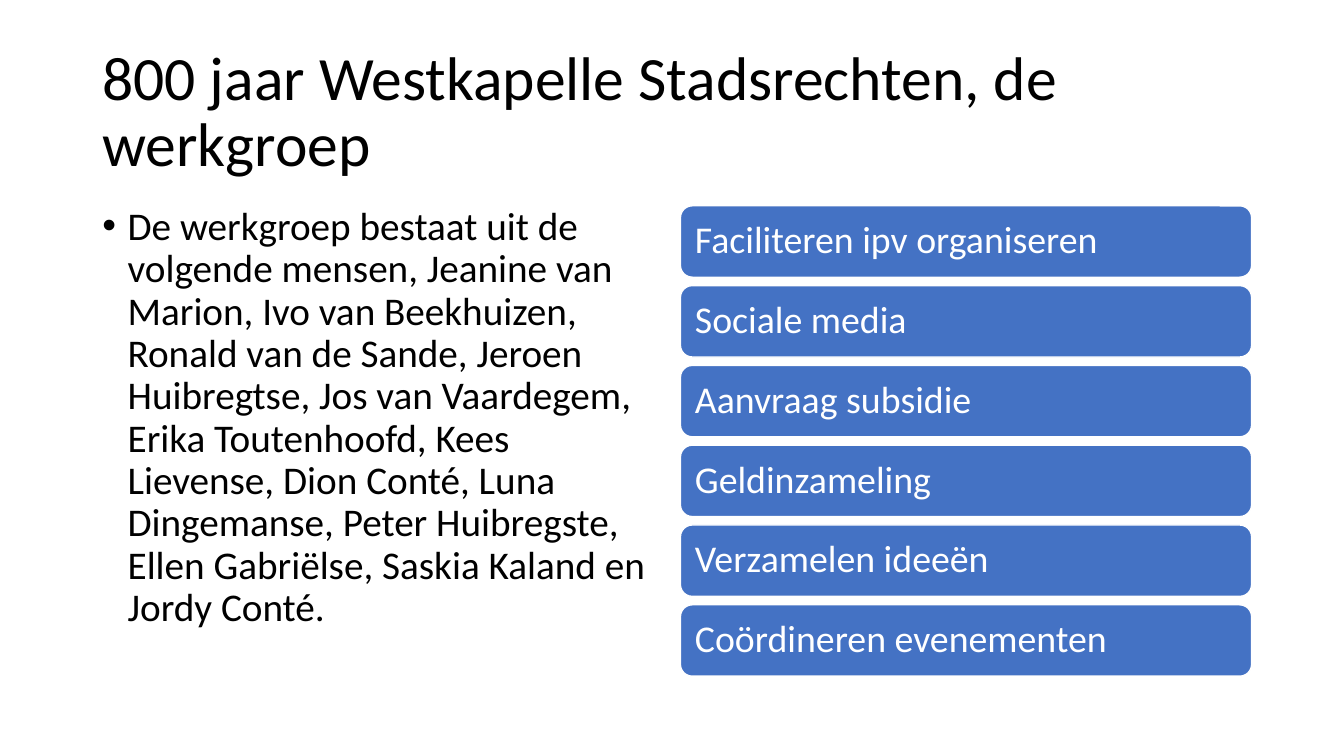
"""Builds the slide that presents the working group and its tasks."""
from dataclasses import dataclass

from lxml import etree
from pptx import Presentation
from pptx import util as u
from pptx.dml.color import RGBColor
from pptx.enum import shapes, text
from pptx.oxml.ns import qn

BLACK = RGBColor(0x00, 0x00, 0x00)
WHITE = RGBColor(0xFF, 0xFF, 0xFF)
BLUE = RGBColor(0x44, 0x72, 0xC4)
FONT = "Calibri"
WIDTH, HEIGHT = u.Inches(13.333), u.Inches(7.5)
COLUMNS, ROWS = 160, 90
TASK_TOP, TASK_HEIGHT, TASK_PITCH = 24.5, 8.5, 9.5

TITLE = "800 jaar Westkapelle Stadsrechten, de werkgroep"
MEMBERS = (
    "De werkgroep bestaat uit de volgende mensen, Jeanine van Marion, "
    "Ivo van Beekhuizen, Ronald van de Sande, Jeroen Huibregtse, "
    "Jos van Vaardegem, Erika Toutenhoofd, Kees Lievense, Dion Conté, "
    "Luna Dingemanse, Peter Huibregste, Ellen Gabriëlse, Saskia Kaland "
    "en Jordy Conté."
)
TASKS = (
    "Faciliteren ipv organiseren",
    "Sociale media",
    "Aanvraag subsidie",
    "Geldinzameling",
    "Verzamelen ideeën",
    "Coördineren evenementen",
)


@dataclass(frozen=True)
class Area:
    """A rectangle in grid columns and rows."""

    column: float
    row: float
    columns: float
    rows: float

    def bounds(self) -> tuple[int, int, int, int]:
        """Returns left, top, width and height in slide units."""
        return (
            round(self.column * WIDTH / COLUMNS),
            round(self.row * HEIGHT / ROWS),
            round(self.columns * WIDTH / COLUMNS),
            round(self.rows * HEIGHT / ROWS),
        )


@dataclass(frozen=True)
class Task:
    """One task of the working group and its place."""

    label: str
    area: Area


def place(box, area: Area) -> None:
    """Moves a placeholder to an area of the grid."""
    box.left, box.top, box.width, box.height = area.bounds()


def write(box, words: str, size: float, color: RGBColor, anchor):
    """Writes one left-aligned paragraph and returns it."""
    frame = box.text_frame
    frame.word_wrap = True
    frame.auto_size = text.MSO_AUTO_SIZE.NONE
    frame.vertical_anchor = anchor
    para = frame.paragraphs[0]
    para.alignment = text.PP_ALIGN.LEFT
    para.line_spacing = 0.9
    para.space_before = u.Pt(0)
    span = para.add_run()
    span.text = words
    span.font.name = FONT
    span.font.size = u.Pt(size)
    span.font.color.rgb = color
    return para


def add_bullet(para) -> None:
    """Gives a paragraph a round bullet and a hanging indent."""
    properties = para._p.get_or_add_pPr()
    properties.set("marL", str(u.Inches(0.25)))
    properties.set("indent", str(u.Inches(-0.25)))
    etree.SubElement(properties, qn("a:buFont"), typeface="Arial")
    etree.SubElement(properties, qn("a:buChar"), char="•")


def draw_task(page, task: Task) -> None:
    """Draws a task as a rounded bar."""
    box = page.shapes.add_shape(
        shapes.MSO_SHAPE.ROUNDED_RECTANGLE, *task.area.bounds()
    )
    box.shadow.inherit = False
    box.fill.solid()
    box.fill.fore_color.rgb = BLUE
    box.line.color.rgb = WHITE
    box.line.width = u.Pt(1)
    frame = box.text_frame
    frame.margin_left = frame.margin_right = u.Inches(0.11)
    frame.margin_top = frame.margin_bottom = u.Inches(0.11)
    write(box, task.label, 27, WHITE, text.MSO_ANCHOR.MIDDLE)


def main() -> None:
    """Builds and saves the deck."""
    deck = Presentation()
    deck.slide_width, deck.slide_height = WIDTH, HEIGHT
    page = deck.slides.add_slide(deck.slide_layouts[1])

    title = page.shapes.title
    place(title, Area(11, 4.8, 138, 17.4))
    write(title, TITLE, 44, BLACK, text.MSO_ANCHOR.MIDDLE)

    body = page.placeholders[1]
    place(body, Area(11, 24, 68, 57.1))
    add_bullet(write(body, MEMBERS, 28, BLACK, text.MSO_ANCHOR.TOP))

    for index, label in enumerate(TASKS):
        row = TASK_TOP + index * TASK_PITCH
        draw_task(page, Task(label, Area(81, row, 68, TASK_HEIGHT)))

    deck.save("out.pptx")


if __name__ == "__main__":
    main()
